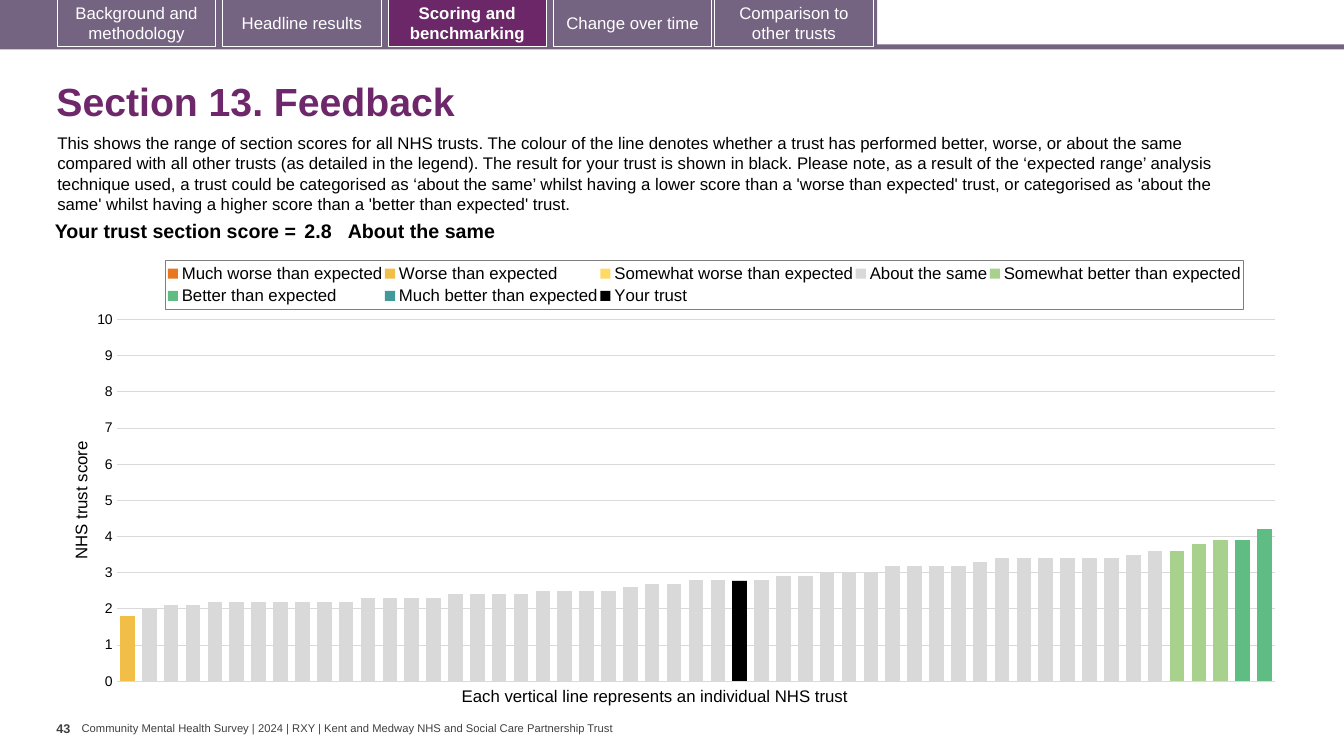
from copy import deepcopy
from dataclasses import dataclass
from typing import NamedTuple

from pptx import Presentation
from pptx.chart.data import CategoryChartData
from pptx.dml.color import RGBColor
from pptx.enum.chart import XL_CHART_TYPE, XL_LEGEND_POSITION, XL_TICK_LABEL_POSITION, XL_TICK_MARK
from pptx.enum.shapes import MSO_SHAPE
from pptx.enum.text import MSO_ANCHOR, MSO_AUTO_SIZE, PP_ALIGN
from pptx.oxml import parse_xml
from pptx.oxml.ns import nsdecls, qn
from pptx.util import Inches, Pt


@dataclass(frozen=True)
class Theme:
    font: str = "Arial"
    banner: str = "756382"
    active: str = "6B2768"
    title: str = "6D276A"
    text: str = "000000"
    muted: str = "404040"
    white: str = "FFFFFF"
    grid: str = "D9D9D9"
    legend_border: str = "7F7F7F"
    title_size: float = 28
    score_size: float = 14
    body_size: float = 12
    axis_size: float = 10
    number_size: float = 9
    footer_size: float = 8


class Box(NamedTuple):
    left: float
    top: float
    width: float
    height: float

    def lengths(self):
        return [Inches(value) for value in self]


THEME = Theme()
SLIDE_WIDTH, SLIDE_HEIGHT = 13.33, 7.5

TABS = [
    ("Background and methodology", 0.57),
    ("Headline results", 2.21),
    ("Scoring and benchmarking", 3.85),
    ("Change over time", 5.49),
    ("Comparison to other trusts", 7.09),
]
ACTIVE_TAB = "Scoring and benchmarking"

INTRODUCTION = (
    "This shows the range of section scores for all NHS trusts. The colour of the line denotes "
    "whether a trust has performed better, worse, or about the same compared with all other trusts "
    "(as detailed in the legend). The result for your trust is shown in black. Please note, as a "
    "result of the ‘expected range’ analysis technique used, a trust could be categorised as "
    "‘about the same’ whilst having a lower score than a 'worse than expected' trust, or categorised "
    "as 'about the same' whilst having a higher score than a 'better than expected' trust."
)

TRUST_COUNT = 53
# Name, colour, rank of the first trust, scores from that rank on
BANDS = [
    ("Much worse than expected", "E87722", 1, []),
    ("Worse than expected", "F1BE48", 1, [1.8]),
    ("Somewhat worse than expected", "FFD966", 1, []),
    ("About the same", "D9D9D9", 2, [
        2, 2.1, 2.1, 2.2, 2.2, 2.2, 2.2, 2.2, 2.2, 2.2, 2.3, 2.3, 2.3, 2.3, 2.4, 2.4,
        2.4, 2.4, 2.5, 2.5, 2.5, 2.5, 2.6, 2.7, 2.7, 2.8, 2.8, 2.8, 2.8, 2.9, 2.9, 3,
        3, 3, 3.2, 3.2, 3.2, 3.2, 3.3, 3.4, 3.4, 3.4, 3.4, 3.4, 3.4, 3.5, 3.6]),
    ("Somewhat better than expected", "A9D18E", 49, [3.6, 3.8, 3.9]),
    ("Better than expected", "5FBD83", 52, [3.9, 4.2]),
    ("Much better than expected", "419999", 1, []),
    ("Your trust", "000000", 29, [2.78]),
]


def set_all(target, values):
    for name, value in values.items():
        setattr(target, name, value)


def style_font(font, size, color=THEME.text, bold=False):
    set_all(font, {"name": THEME.font, "size": Pt(size), "bold": bold})
    font.color.rgb = RGBColor.from_string(color)


def set_margins(target, horizontal, vertical):
    set_all(target, {"margin_left": Inches(horizontal), "margin_right": Inches(horizontal),
                     "margin_top": Inches(vertical), "margin_bottom": Inches(vertical)})


def add_rectangle(slide, box, fill, line=None):
    shape = slide.shapes.add_shape(MSO_SHAPE.RECTANGLE, *box.lengths())
    shape.shadow.inherit = False
    shape.fill.solid()
    shape.fill.fore_color.rgb = RGBColor.from_string(fill)
    if line:
        shape.line.color.rgb = RGBColor.from_string(line)
        shape.line.width = Pt(0.75)
    else:
        shape.line.fill.background()
    return shape


def add_text(slide, box, text, size, color=THEME.text, bold=False, wrap=False,
             margins=(0.1, 0.05), anchor=MSO_ANCHOR.TOP):
    frame = slide.shapes.add_textbox(*box.lengths()).text_frame
    set_all(frame, {"word_wrap": wrap, "vertical_anchor": anchor, "text": text})
    set_margins(frame, *margins)
    style_font(frame.paragraphs[0].font, size, color, bold)


def add_navigation(slide, box):
    rule = 0.05
    add_rectangle(slide, Box(box.left, box.height - rule, box.width, rule), THEME.banner)
    add_rectangle(slide, Box(box.left, box.top, 8.7, 0.47), THEME.banner)
    for label, left in TABS:
        active = label == ACTIVE_TAB
        tab = add_rectangle(slide, Box(box.left + left, box.top - 0.01, 1.57, 0.47),
                            THEME.active if active else THEME.banner, THEME.white)
        frame = tab.text_frame
        set_all(frame, {"word_wrap": True, "vertical_anchor": MSO_ANCHOR.MIDDLE, "text": label})
        frame.paragraphs[0].alignment = PP_ALIGN.CENTER
        style_font(frame.paragraphs[0].font, THEME.body_size, THEME.white, active)


def add_heading(slide, box):
    title = slide.shapes.title
    set_all(title, dict(zip(("left", "top", "width", "height"), box.lengths())))
    frame = title.text_frame
    set_all(frame, {"text": "Section 13. Feedback", "vertical_anchor": MSO_ANCHOR.MIDDLE,
                    "auto_size": MSO_AUTO_SIZE.NONE})
    paragraph = frame.paragraphs[0]
    set_all(paragraph, {"alignment": PP_ALIGN.LEFT, "line_spacing": 0.9})
    style_font(paragraph.font, THEME.title_size, THEME.title, True)
    add_text(slide, Box(box.left + 0.01, box.top + 0.6, 12.13, 0.91), INTRODUCTION,
             THEME.body_size, wrap=True)


def add_score_table(slide, box):
    table = slide.shapes.add_table(1, 3, *box.lengths()).table
    set_all(table, {"first_row": False, "horz_banding": False})
    columns = [
        ("Your trust section score =", 2.63, 0.04, PP_ALIGN.RIGHT),
        ("2.8", 0.47, 0.04, PP_ALIGN.LEFT),
        ("About the same", box.width - 3.1, 0, PP_ALIGN.LEFT),
    ]
    for index, (text, width, margin, alignment) in enumerate(columns):
        table.columns[index].width = Inches(width)
        cell = table.cell(0, index)
        cell.fill.background()
        cell.text = text
        set_margins(cell, margin, 0.04)
        paragraph = cell.text_frame.paragraphs[0]
        paragraph.alignment = alignment
        style_font(paragraph.font, THEME.score_size, bold=True)


def manual_layout(left, top, width, height, inner=False):
    target = '<c:layoutTarget val="inner"/>' if inner else ""
    return parse_xml(
        f'<c:layout {nsdecls("c")}><c:manualLayout>{target}'
        '<c:xMode val="edge"/><c:yMode val="edge"/>'
        f'<c:x val="{left}"/><c:y val="{top}"/><c:w val="{width}"/><c:h val="{height}"/>'
        '</c:manualLayout></c:layout>')


def move_last_series_to_second_axis(plot_area):
    """Draw the last series on a matching, unlabelled axis at the right."""
    bars = plot_area.find(qn("c:barChart"))
    second_bars = deepcopy(bars)
    bars.remove(bars.findall(qn("c:ser"))[-1])
    for series in second_bars.findall(qn("c:ser"))[:-1]:
        second_bars.remove(series)
    bars.addnext(second_bars)
    axes = [deepcopy(plot_area.find(qn(tag))) for tag in ("c:catAx", "c:valAx")]
    for number, axis, reference in zip((5001, 5002), axes, second_bars.findall(qn("c:axId"))):
        reference.set("val", str(number))
        axis.find(qn("c:axId")).set("val", str(number))
        axis.find(qn("c:crossAx")).set("val", str(10003 - number))
    axes[1].find(qn("c:axPos")).set("val", "r")
    axes[1].find(qn("c:crosses")).set("val", "max")
    axes[1].find(qn("c:tickLblPos")).set("val", "none")
    plot_area.findall(qn("c:valAx"))[-1].addnext(axes[1])
    axes[1].addnext(axes[0])


def add_score_chart(slide, box):
    data = CategoryChartData()
    data.categories = [str(rank) for rank in range(1, TRUST_COUNT + 1)]
    for name, _, first, scores in BANDS:
        before = [None] * (first - 1)
        after = [None] * (TRUST_COUNT - len(before) - len(scores))
        data.add_series(name, before + scores + after)
    chart = slide.shapes.add_chart(XL_CHART_TYPE.COLUMN_CLUSTERED, *box.lengths(), data).chart
    chart.has_title = False
    style_font(chart.font, THEME.axis_size)
    set_all(chart.plots[0], {"gap_width": 50, "overlap": 100, "vary_by_categories": False})
    for series, (_, color, _, _) in zip(chart.plots[0].series, BANDS):
        series.format.fill.solid()
        series.format.fill.fore_color.rgb = RGBColor.from_string(color)

    # Axes
    chart.category_axis.visible = False
    axis = chart.value_axis
    set_all(axis, {"minimum_scale": 0, "maximum_scale": 10, "major_unit": 1,
                   "major_tick_mark": XL_TICK_MARK.NONE, "has_major_gridlines": False,
                   "tick_label_position": XL_TICK_LABEL_POSITION.NEXT_TO_AXIS})
    axis.format.line.fill.background()
    plot_area = axis._element.getparent()
    move_last_series_to_second_axis(plot_area)
    axis.has_major_gridlines = True
    grid = axis.major_gridlines.format.line
    grid.color.rgb, grid.width = RGBColor.from_string(THEME.grid), Pt(0.75)
    style_font(axis.tick_labels.font, THEME.axis_size)
    axis.axis_title.text_frame.text = "NHS trust score"
    style_font(axis.axis_title.text_frame.paragraphs[0].font, THEME.body_size)
    for layout in plot_area.findall(qn("c:layout")):
        plot_area.remove(layout)
    plot_area.insert(0, manual_layout(0.04, 0.158, 0.946, 0.808, inner=True))

    # Legend
    chart.has_legend = True
    legend = chart.legend
    set_all(legend, {"position": XL_LEGEND_POSITION.TOP, "include_in_layout": False})
    style_font(legend.font, THEME.body_size)
    element = legend._element
    for layout in element.findall(qn("c:layout")):
        element.remove(layout)
    element.find(qn("c:legendPos")).addnext(manual_layout(0.08, 0.025, 0.88, 0.11))
    element.find(qn("c:overlay")).addnext(parse_xml(
        f'<c:spPr {nsdecls("c", "a")}><a:ln w="9525"><a:solidFill>'
        f'<a:srgbClr val="{THEME.legend_border}"/></a:solidFill></a:ln></c:spPr>'))

    # Caption under the columns
    add_text(slide, Box(box.left + 3.81, box.top + 4.28, 4.11, 0.3),
             "Each vertical line represents an individual NHS trust", THEME.body_size)


def add_footer(slide, box):
    add_text(slide, Box(box.left, box.top, 0.25, box.height), "43", THEME.number_size,
             THEME.muted, True, margins=(0, 0.05))
    add_text(slide, Box(box.left + 0.25, box.top + 0.06, 5.34, 0.13),
             "Community Mental Health Survey | 2024 | RXY | "
             "Kent and Medway NHS and Social Care Partnership Trust",
             THEME.footer_size, THEME.muted, margins=(0, 0), anchor=MSO_ANCHOR.MIDDLE)


def main():
    presentation = Presentation()
    presentation.slide_width = Inches(SLIDE_WIDTH)
    presentation.slide_height = Inches(SLIDE_HEIGHT)
    slide = presentation.slides.add_slide(presentation.slide_layouts[5])
    add_navigation(slide, Box(0, 0, SLIDE_WIDTH, 0.49))
    add_heading(slide, Box(0.46, 0.67, 12.49, 0.72))
    add_score_chart(slide, Box(0.67, 2.47, 12.15, 4.44))
    add_score_table(slide, Box(0.35, 2.15, 11.69, 0.31))
    add_footer(slide, Box(0.56, 7.1, 5.59, 0.4))
    presentation.save("out.pptx")


if __name__ == "__main__":
    main()
